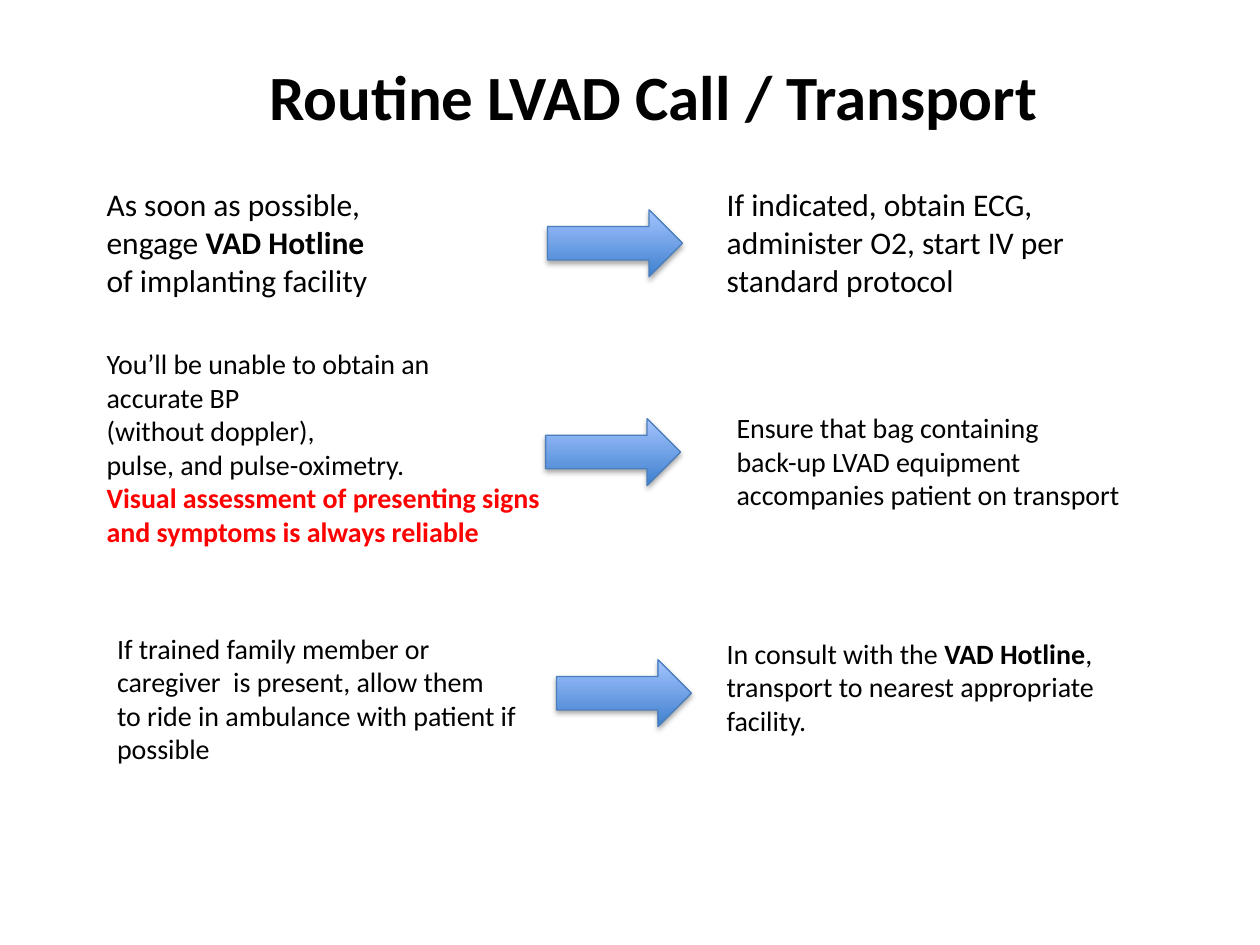
import pptx
import pptx.dml.color
import pptx.enum.shapes
import pptx.enum.text
import pptx.oxml
import pptx.util
from pptx.oxml.ns import nsdecls

Cm = pptx.util.Cm
BLACK, RED = "000000", "FF0000"
ARROW_SIZE = (2.72, 1.35)
ARROW_LINE = "4B7EBC"
ARROW_STOPS = [(0, "3F80CE"), (1, "A4C4FF")]

TITLE = {
    "box": (2.59, 0.61, 20.12, 2.41), "size": 36,
    "paragraphs": [[("Routine LVAD Call / Transport", True, BLACK)]],
    "frame": {
        "margin_left": Cm(1.3), "margin_top": Cm(0.32),
        "vertical_anchor": pptx.enum.text.MSO_ANCHOR.MIDDLE,
    },
    "alignment": pptx.enum.text.PP_ALIGN.CENTER,
}

STEPS = [
    {"box": (1.9, 3.61, 7.62, 2.57), "size": 18, "paragraphs": [
        "As soon as possible,",
        [("engage ", False, BLACK), ("VAD Hotline", True, BLACK)],
        "of implanting facility",
    ]},
    {"box": (14.4, 3.61, 8.05, 2.57), "size": 18, "paragraphs": [
        "If indicated, obtain ECG,",
        "administer O2, start IV per",
        "standard protocol",
    ]},
    {"box": (1.9, 6.86, 9.32, 5.05), "size": 16, "paragraphs": [
        "You’ll be unable to obtain an",
        "accurate BP",
        "(without doppler),",
        "pulse, and pulse-oximetry.",
        [("Visual assessment of presenting signs and symptoms is always reliable",
          True, RED)],
    ]},
    {"box": (2.11, 12.6, 9.09, 3), "size": 16, "paragraphs": [
        "If trained family member or",
        "caregiver  is present, allow them",
        "to ride in ambulance with patient if possible",
    ]},
    {"box": (14.6, 8.15, 8.33, 2.31), "size": 16, "frame": {"word_wrap": False},
     "paragraphs": [
        "Ensure that bag containing",
        "back-up LVAD equipment",
        "accompanies patient on transport",
    ]},
    {"box": (14.4, 12.7, 8.97, 2.31), "size": 16, "frame": {"word_wrap": False},
     "paragraphs": [
        [("In consult with the ", False, BLACK), ("VAD Hotline", True, BLACK),
         (",", False, BLACK)],
        "transport to nearest appropriate",
        "facility.",
    ]},
]

ARROWS = [(11.04, 4.23), (11, 8.44), (11.22, 13.3)]


def color(value):
    return pptx.dml.color.RGBColor.from_string(value)


def set_values(target, values):
    for name, value in values.items():
        setattr(target, name, value)


def add_text(slide, content):
    frame = slide.shapes.add_textbox(*map(Cm, content["box"])).text_frame
    set_values(frame, {"word_wrap": True, **content.get("frame", {})})
    for index, runs in enumerate(content["paragraphs"]):
        paragraph = frame.add_paragraph() if index else frame.paragraphs[0]
        paragraph.alignment = content.get("alignment")
        if isinstance(runs, str):
            runs = [(runs, False, BLACK)]
        for text, bold, text_color in runs:
            run = paragraph.add_run()
            run.text = text
            set_values(run.font, {
                "name": "Calibri", "bold": bold,
                "size": pptx.util.Pt(content["size"]),
            })
            run.font.color.rgb = color(text_color)


def add_arrow(slide, position):
    arrow = slide.shapes.add_shape(
        pptx.enum.shapes.MSO_SHAPE.RIGHT_ARROW, *map(Cm, position + ARROW_SIZE))
    arrow.fill.gradient()
    arrow.fill.gradient_angle = 90
    for stop, (place, stop_color) in zip(arrow.fill.gradient_stops, ARROW_STOPS):
        stop.position = place
        stop.color.rgb = color(stop_color)
    arrow.line.color.rgb = color(ARROW_LINE)
    arrow.line.width = pptx.util.Pt(0.75)
    properties = arrow.element.spPr
    properties.append(pptx.oxml.parse_xml(
        f'<a:effectLst {nsdecls("a")}>'
        '<a:outerShdw blurRad="40000" dist="23000" dir="5400000" rotWithShape="0">'
        '<a:srgbClr val="000000"><a:alpha val="35000"/></a:srgbClr>'
        '</a:outerShdw></a:effectLst>'))


def main():
    presentation = pptx.Presentation()
    set_values(presentation, {"slide_width": Cm(25.4), "slide_height": Cm(19.05)})
    slide = presentation.slides.add_slide(presentation.slide_layouts[6])
    for content in [TITLE, *STEPS]:
        add_text(slide, content)
    for position in ARROWS:
        add_arrow(slide, position)
    presentation.save("out.pptx")


if __name__ == "__main__":
    main()
